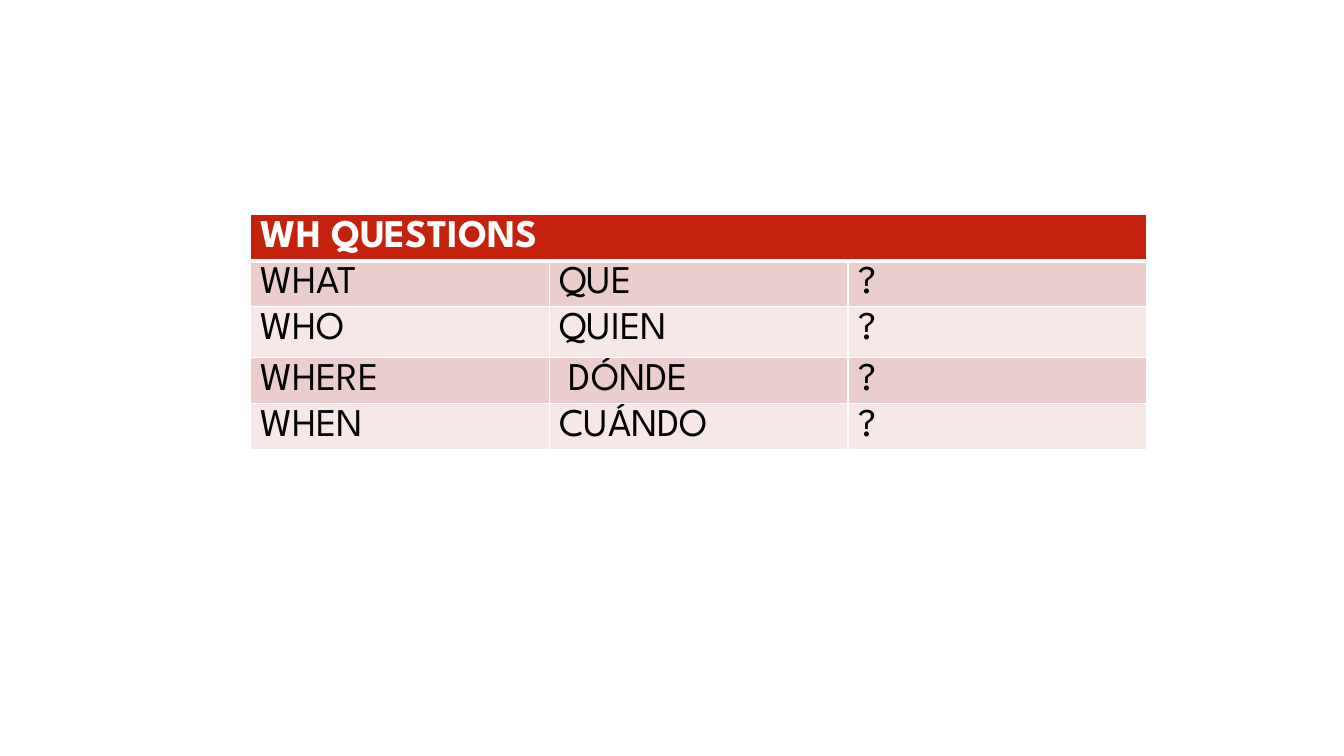
"""Build a slide with a table of WH questions and their Spanish equivalents."""
from typing import NamedTuple

from lxml import etree
from pptx import Presentation
from pptx import util as u
from pptx.dml.color import RGBColor
from pptx.oxml import ns
from pptx.table import _Cell

WHITE = RGBColor(0xFF, 0xFF, 0xFF)
BLACK = RGBColor(0x00, 0x00, 0x00)
RED = RGBColor(0xC4, 0x22, 0x0D)
DARK_BAND = RGBColor(0xEA, 0xCD, 0xCC)
LIGHT_BAND = RGBColor(0xF5, 0xE8, 0xE7)
FONT_NAME = "League Spartan"
FONT_SIZE = u.Pt(28)
COLUMN_WIDTH = u.Cm(7.53)
ROW_HEIGHT = u.Cm(1.04)
TALL_ROW_HEIGHT = u.Cm(1.28)


class Row(NamedTuple):
    """Texts and look of one table row."""

    texts: tuple[str, str, str]
    fill: RGBColor
    color: RGBColor = BLACK
    bold: bool = False
    height: u.Length = ROW_HEIGHT
    bottom_line: u.Length = u.Pt(1)


ROWS = (
    Row(("WH QUESTIONS", "", ""), RED, WHITE, True, bottom_line=u.Pt(3)),
    Row(("WHAT", "QUE", "?"), DARK_BAND),
    Row(("WHO", "QUIEN", "?"), LIGHT_BAND, height=TALL_ROW_HEIGHT),
    Row(("WHERE", " DÓNDE", "?"), DARK_BAND),
    Row(("WHEN", "CUÁNDO", "?"), LIGHT_BAND),
)


def add_border(cell: _Cell, side: str, width: u.Length) -> None:
    """Add a white line to one side of a cell."""
    properties = cell._tc.get_or_add_tcPr()
    line = etree.SubElement(properties, ns.qn(f"a:ln{side}"), w=str(int(width)))
    fill = etree.SubElement(line, ns.qn("a:solidFill"))
    etree.SubElement(fill, ns.qn("a:srgbClr"), val=str(WHITE))


def fill_cell(cell: _Cell, content: str, row: Row, top_line: u.Length) -> None:
    """Write and format one cell."""
    widths = {"L": u.Pt(1), "R": u.Pt(1), "T": top_line, "B": row.bottom_line}
    for side, width in widths.items():
        add_border(cell, side, width)
    cell.fill.solid()
    cell.fill.fore_color.rgb = row.fill
    cell.text_frame.text = content
    font = cell.text_frame.paragraphs[0].font
    for run in cell.text_frame.paragraphs[0].runs:
        font = run.font
    font.name = FONT_NAME
    font.size = FONT_SIZE
    font.bold = row.bold
    font.color.rgb = row.color


def main() -> None:
    """Create and save the presentation."""
    presentation = Presentation()
    presentation.slide_width = u.Cm(33.87)
    presentation.slide_height = u.Cm(19.05)
    slide = presentation.slides.add_slide(presentation.slide_layouts[6])
    columns = len(ROWS[0].texts)
    table = slide.shapes.add_table(
        len(ROWS), columns, u.Cm(6.31), u.Cm(5.41),
        COLUMN_WIDTH * columns, sum(row.height for row in ROWS),
    ).table
    for column in table.columns:
        column.width = COLUMN_WIDTH
    top_line = u.Pt(1)
    for index, row in enumerate(ROWS):
        table.rows[index].height = row.height
        for cell, content in zip(table.rows[index].cells, row.texts):
            fill_cell(cell, content, row, top_line)
        top_line = row.bottom_line
    table.cell(0, 0).merge(table.cell(0, columns - 1))
    presentation.save("out.pptx")


if __name__ == "__main__":
    main()
